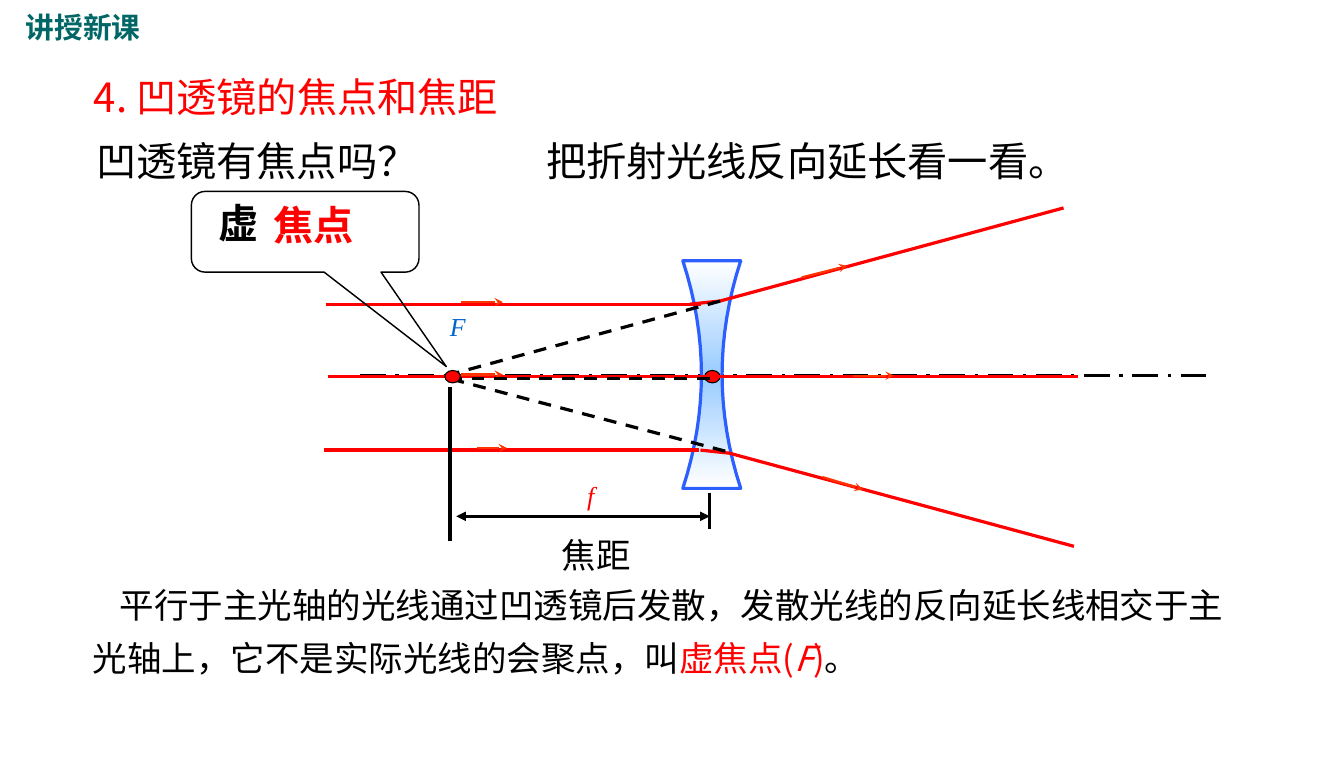
import pptx
import pptx.util
import pptx.dml.color
import pptx.enum.dml
import pptx.enum.shapes
import pptx.enum.text
import pptx.oxml
import pptx.oxml.ns
import copy
import lxml.etree

Inches = pptx.util.Inches
SHAPE = pptx.enum.shapes.MSO_SHAPE
DASH = pptx.enum.dml.MSO_LINE
ALIGN = pptx.enum.text.PP_ALIGN
SANS = "Noto Sans CJK SC"
SERIF = "Times New Roman"
COLORS = {
    "black": "000000", "white": "FFFFFF", "red": "FF0000", "arrow": "FF3300",
    "lens_edge": "2D5FFF", "lens": "99CCFF", "blue": "0066CC", "teal": "006666",
}


def rgb(name):
    return pptx.dml.color.RGBColor.from_string(COLORS[name])


def add_run(p, text, size=28, font=SANS, color="black", bold=False, italic=False):
    r = p.add_run()
    r.text = text
    r.font.size = pptx.util.Pt(size)
    r.font.name = font
    r.font.bold = bold
    r.font.italic = italic
    r.font.color.rgb = rgb(color)
    ea = lxml.etree.SubElement(r.font._element, pptx.oxml.ns.qn("a:ea"))
    ea.set("typeface", SANS if font == "Arial" else font)


class Slide:
    def __init__(self, prs):
        self.s = prs.slides.add_slide(prs.slide_layouts[6])
        self.width = 2.25

    def stroke(self, line, color, width=None, dash=None):
        line.color.rgb = rgb(color)
        line.width = pptx.util.Pt(width or self.width)
        if dash:
            line.dash_style = dash

    def line(self, start, end, color="black", width=None, dash=None, head=None, tail=None):
        points = [Inches(v) for v in (*start, *end)]
        sp = self.s.shapes.add_connector(pptx.enum.shapes.MSO_CONNECTOR.STRAIGHT, *points)
        self.stroke(sp.line, color, width, dash)
        ln = sp.line._get_or_add_ln()
        for tag, kind in (("a:headEnd", head), ("a:tailEnd", tail)):
            if kind:
                end_mark = lxml.etree.SubElement(ln, pptx.oxml.ns.qn(tag))
                end_mark.set("type", kind)
        lxml.etree.SubElement(sp._element.spPr, pptx.oxml.ns.qn("a:effectLst"))

    def arrow(self, start, end):
        self.line(start, end, "arrow", 1.5, tail="stealth")

    def outline(self, points, color, close=False):
        pts = [(Inches(x), Inches(y)) for x, y in points]
        fb = self.s.shapes.build_freeform(*pts[0], scale=1.0)
        fb.add_line_segments(pts[1:], close=close)
        sp = fb.convert_to_shape()
        sp.shadow.inherit = False
        sp.fill.background()
        self.stroke(sp.line, color)
        return sp

    def shape(self, kind, box, fill=None, line=None, width=0.75):
        sp = self.s.shapes.add_shape(kind, *[Inches(v) for v in box])
        sp.shadow.inherit = False
        if fill:
            sp.fill.solid()
            sp.fill.fore_color.rgb = rgb(fill)
        else:
            sp.fill.background()
        if line:
            self.stroke(sp.line, line, width)
        else:
            sp.line.fill.background()
        return sp

    def dot(self, x, y):
        self.shape(SHAPE.OVAL, (x - 0.07, y - 0.06, 0.15, 0.12), "red", "black")

    def set_text(self, sp, runs, align=ALIGN.LEFT, insets=(0.1, 0.05, 0.1, 0.05)):
        tf = sp.text_frame
        tf.word_wrap = True
        tf.vertical_anchor = pptx.enum.text.MSO_ANCHOR.TOP
        tf.margin_left, tf.margin_top, tf.margin_right, tf.margin_bottom = map(Inches, insets)
        p = tf.paragraphs[0]
        p.alignment = align
        for text, style in runs:
            add_run(p, text, **style)
        return p

    def text(self, box, *runs, align=ALIGN.LEFT):
        sp = self.s.shapes.add_textbox(*[Inches(v) for v in box])
        return self.set_text(sp, runs, align)


def add_lens(slide, cx, cy):
    steps = [i / 8 for i in range(-8, 9)]
    right = [(cx + 0.1 + 0.18 * t * t, cy + 1.1 * t) for t in steps]
    left = [(2 * cx - x, y) for x, y in reversed(right)]
    sp = slide.outline(right + left, "lens_edge", close=True)
    sp.fill.gradient()
    sp.fill.gradient_angle = 90
    for stop, name in zip(sp.fill.gradient_stops, ("white", "lens")):
        stop.color.rgb = rgb(name)
    stops = sp._element.spPr.find(".//" + pptx.oxml.ns.qn("a:gsLst"))
    stops.append(copy.deepcopy(stops[0]))
    for stop, pos in zip(stops, (0, 50000, 100000)):
        stop.set("pos", str(pos))


def add_rays(slide):
    for x, y, arrow_from, arrow_to in (
        (3.15, 2.94, 4.46, 4.86), (3.17, 3.64, 4.46, 4.86), (3.13, 4.35, 4.61, 4.9)
    ):
        slide.line((x, y), (x + 3.63, y), "red")
        slide.arrow((arrow_from, y - 0.02), (arrow_to, y - 0.02))
    slide.outline([(6.67, 2.94), (6.96, 2.91), (10.28, 2.01)], "red")
    slide.arrow((7.75, 2.68), (8.19, 2.57))
    slide.outline([(6.77, 4.35), (7.05, 4.38), (10.38, 5.28)], "red")
    slide.arrow((7.95, 4.61), (8.34, 4.73))
    slide.line((6.78, 3.64), (10.42, 3.64), "red")
    slide.arrow((8.24, 3.63), (8.64, 3.63))
    for start, end in (
        ((7.01, 4.36), (4.35, 3.66)), ((6.96, 2.91), (4.35, 3.62)), ((6.86, 3.66), (4.3, 3.66))
    ):
        slide.line(start, end, dash=DASH.DASH)


def add_focal_length(slide):
    slide.line((6.86, 4.76), (6.86, 5.11))
    slide.line((4.35, 3.74), (4.35, 5.23))
    slide.line((4.41, 4.99), (6.86, 4.99), head="triangle", tail="triangle")
    label = slide.shape(SHAPE.RECTANGLE, (5.43, 4.64, 0.56, 0.3), "white")
    symbol = ("f", dict(size=18, font=SERIF, color="red", italic=True))
    slide.set_text(label, [symbol], ALIGN.CENTER, (0, 0, 0, 0))
    slide.text((4.77, 5.11, 1.99, 0.5), ("焦距", dict(size=24)), align=ALIGN.CENTER)


def add_focus_callout(slide):
    sp = slide.shape(SHAPE.ROUNDED_RECTANGULAR_CALLOUT, (1.85, 1.85, 2.2, 0.78), line="black", width=1)
    for i, value in enumerate((0.62, 1.67, 0.17)):
        sp.adjustments[i] = value
    slide.set_text(sp, [("焦点", dict(color="red", bold=True))], ALIGN.CENTER, (0.16, 0.05, 0, 0.05))
    slide.text((1.64, 1.87, 1.33, 0.57), ("虚", dict(bold=True)), align=ALIGN.CENTER)
    symbol = ("F", dict(size=18, font=SERIF, color="blue", italic=True))
    slide.text((3.99, 2.95, 0.87, 0.4), symbol, align=ALIGN.CENTER)


def main():
    prs = pptx.Presentation()
    prs.slide_width, prs.slide_height = Inches(12.99), Inches(7.48)
    slide = Slide(prs)

    slide.text((0.83, 1.27, 6.91, 0.57), ("凹透镜有焦点吗？", {}))
    slide.text((5.18, 1.27, 6.96, 0.57), ("把折射光线反向延长看一看。", {}))
    slide.line((3.48, 3.63), (11.67, 3.63), dash=DASH.LONG_DASH_DOT)
    add_lens(slide, 6.88, 3.62)
    slide.dot(6.88, 3.64)
    add_rays(slide)
    add_focus_callout(slide)
    add_focal_length(slide)
    slide.text((0.81, 0.65, 8.7, 0.57), ("4. 凹透镜的焦点和焦距", dict(color="red")))

    body = dict(size=24)
    key = dict(size=24, color="red")
    p = slide.text(
        (0.8, 5.47, 11.34, 1.15),
        ("平行于主光轴的光线通过凹透镜后发散，发散光线的反向延长线相交于主光轴上，它不是实际光线的会聚点，叫", body),
        ("虚焦点(", key), ("F", dict(key, italic=True)), (")", key), ("。", body),
    )
    p.line_spacing = 1.3
    p._p.get_or_add_pPr().set("indent", str(Inches(0.26)))
    slide.dot(4.37, 3.64)
    slide.text((0.15, 0.05, 1.84, 0.44), ("讲授新课", dict(size=20, font="Arial", color="teal", bold=True)))
    prs.save("out.pptx")


if __name__ == "__main__":
    main()
